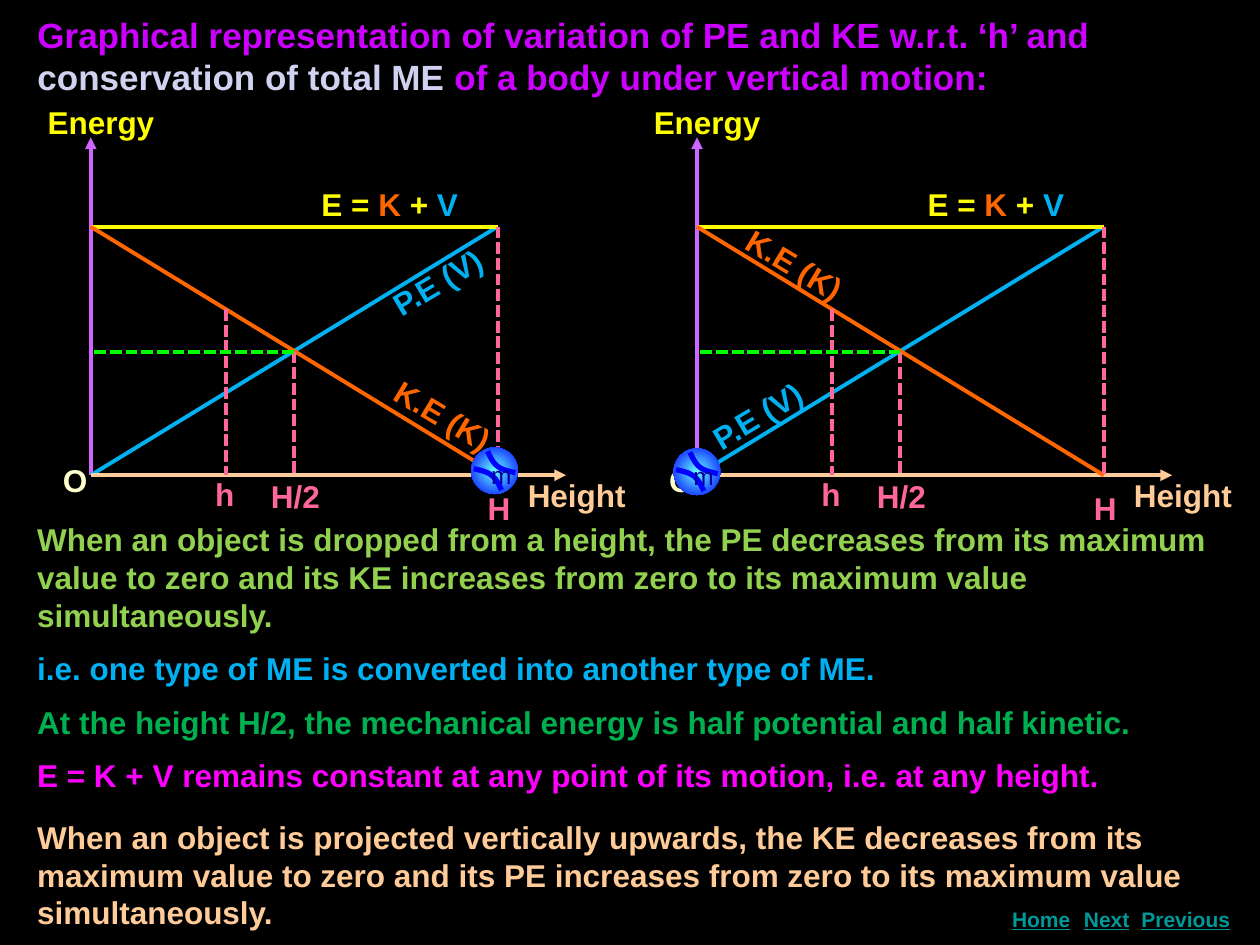
import pptx
import pptx.dml.color
import pptx.enum.dml
import pptx.enum.shapes
import pptx.enum.text
import pptx.oxml.ns
import pptx.util
from lxml import etree

Cm, Pt = pptx.util.Cm, pptx.util.Pt
RGBColor = pptx.dml.color.RGBColor
PP_ALIGN = pptx.enum.text.PP_ALIGN
qn = pptx.oxml.ns.qn

BLACK = RGBColor(0x00, 0x00, 0x00)
VIOLET = RGBColor(0xCC, 0x00, 0xFF)
LAVENDER = RGBColor(0xD1, 0xD1, 0xF0)
PURPLE = RGBColor(0xCC, 0x66, 0xFF)
YELLOW = RGBColor(0xFF, 0xFF, 0x00)
CREAM = RGBColor(0xFF, 0xFF, 0xCC)
ORANGE = RGBColor(0xFF, 0x66, 0x00)
SKY = RGBColor(0x00, 0xB0, 0xF0)
PEACH = RGBColor(0xFF, 0xCC, 0x99)
PINK = RGBColor(0xFF, 0x66, 0x99)
LIME = RGBColor(0x00, 0xFF, 0x00)
LEAF = RGBColor(0x92, 0xD0, 0x50)
GREEN = RGBColor(0x00, 0xB0, 0x50)
MAGENTA = RGBColor(0xFF, 0x00, 0xFF)
TEAL = RGBColor(0x00, 0x99, 0x99)
CYAN = RGBColor(0x66, 0xFF, 0xFF)
BLUE = RGBColor(0x00, 0x00, 0xFF)
NAVY = RGBColor(0x00, 0x00, 0x99)

# Vertical levels of both graphs, and distances along the height axis
AXIS_TOP, TOTAL, CROSSING, BASE = 2.77, 4.57, 7.09, 9.58
FULL_HEIGHT, AXIS_END = 8.2, 9.58
HALF_HEIGHT = FULL_HEIGHT / 2
SOME_HEIGHT = 2.72
SOME_KE = TOTAL + (BASE - TOTAL) * SOME_HEIGHT / FULL_HEIGHT
LEFT_ORIGIN, RIGHT_ORIGIN = 1.83, 14.05

# Seam of the ball, as Bezier points from its centre
SEAM = [(-0.14, -0.39), (-0.09, -0.29), (-0.04, -0.17), (0.06, -0.09),
        (0.17, -0.01), (0.29, 0.01), (0.42, 0.04)]


def bezier(points, steps=8):
    """Points along a chain of cubic Bezier curves."""
    curve = [points[0]]
    for first in range(0, len(points) - 1, 3):
        section = points[first:first + 4]
        for step in range(1, steps + 1):
            t = step / steps
            weights = ((1 - t) ** 3, 3 * t * (1 - t) ** 2, 3 * t ** 2 * (1 - t), t ** 3)
            curve.append(tuple(sum(w * p[axis] for w, p in zip(weights, section))
                               for axis in (0, 1)))
    return curve


class EnergySlide:
    font_name = "Arial"
    line_width = Pt(2.25)

    def __init__(self, presentation):
        self.slide = presentation.slides.add_slide(presentation.slide_layouts[5])
        self.shapes = self.slide.shapes
        background = self.slide.background.fill
        background.solid()
        background.fore_color.rgb = BLACK

    def fill_paragraph(self, paragraph, runs, size=18, bold=True, underline=None):
        """Fill a paragraph with (text, colour) runs."""
        font = paragraph.font
        font.name, font.size, font.bold = self.font_name, Pt(size), bold
        font.underline = underline
        if len(runs) == 1:
            font.color.rgb = runs[0][1]
        for content, color in runs:
            run = paragraph.add_run()
            run.text = content
            if len(runs) > 1:
                run.font.color.rgb = color

    def title(self, left, top, width, height, runs):
        heading = self.shapes.title
        heading.left, heading.top = Cm(left), Cm(top)
        heading.width, heading.height = Cm(width), Cm(height)
        frame = heading.text_frame
        frame.auto_size = pptx.enum.text.MSO_AUTO_SIZE.NONE
        frame.vertical_anchor = pptx.enum.text.MSO_ANCHOR.TOP
        frame.paragraphs[0].alignment = PP_ALIGN.LEFT
        self.fill_paragraph(frame.paragraphs[0], runs, size=20)

    def text(self, left, top, width, height, paragraphs, align=None, rotation=0,
             wrap=True, **style):
        box = self.shapes.add_textbox(Cm(left), Cm(top), Cm(width), Cm(height))
        box.rotation = rotation
        frame = box.text_frame
        frame.word_wrap = wrap
        for index, runs in enumerate(paragraphs):
            paragraph = frame.add_paragraph() if index else frame.paragraphs[0]
            paragraph.alignment = align
            if index:
                paragraph.space_before = Pt(9)
            self.fill_paragraph(paragraph, runs, **style)

    def line(self, x1, y1, x2, y2, color, dashed=False, arrow=False):
        connector = self.shapes.add_connector(
            pptx.enum.shapes.MSO_CONNECTOR.STRAIGHT, Cm(x1), Cm(y1), Cm(x2), Cm(y2))
        connector.line.color.rgb = color
        connector.line.width = self.line_width
        if dashed:
            connector.line.dash_style = pptx.enum.dml.MSO_LINE.SQUARE_DOT
        properties = connector._element.spPr
        if arrow:
            etree.SubElement(properties.find(qn("a:ln")), qn("a:tailEnd"), type="triangle")
        etree.SubElement(properties, qn("a:effectLst"))

    def ball(self, x, y, diameter=0.94):
        sphere = self.shapes.add_shape(
            pptx.enum.shapes.MSO_SHAPE.OVAL, Cm(x - diameter / 2), Cm(y - diameter / 2),
            Cm(diameter), Cm(diameter))
        sphere.shadow.inherit = False
        sphere.line.fill.background()
        sphere.fill.gradient()
        for stop, color in zip(sphere.fill.gradient_stops, (CYAN, BLUE)):
            stop.color.rgb = color
        # Radial gradient from the centre
        linear = sphere._element.spPr.find(".//" + qn("a:lin"))
        radial = etree.Element(qn("a:path"), {"path": "circle"})
        etree.SubElement(radial, qn("a:fillToRect"),
                         {side: "50000" for side in ("l", "t", "r", "b")})
        linear.getparent().replace(linear, radial)
        # The two seams mirror each other through the centre
        for sign in (1, -1):
            points = [(Cm(x + sign * dx), Cm(y + sign * dy)) for dx, dy in bezier(SEAM)]
            builder = self.shapes.build_freeform(*points[0])
            builder.add_line_segments(points[1:], close=False)
            seam = builder.convert_to_shape()
            seam.shadow.inherit = False
            seam.fill.background()
            seam.line.color.rgb = BLUE
            seam.line.width = Pt(3)
        self.text(x - 0.32, y - 0.34, 0.84, 0.81, [[("m", NAVY)]],
                  wrap=False, size=14, bold=False)

    def graph(self, origin, pe_label, ke_label):
        """Energy against height; label places are given from the origin."""
        end = origin + FULL_HEIGHT
        half = origin + HALF_HEIGHT
        some = origin + SOME_HEIGHT
        # Axes and energy lines
        self.line(origin, BASE, origin, AXIS_TOP, PURPLE, arrow=True)
        self.line(origin, BASE, end, TOTAL, SKY)
        self.line(origin, TOTAL, end, TOTAL, YELLOW)
        self.line(origin, BASE, origin + AXIS_END, BASE, PEACH, arrow=True)
        self.line(origin, TOTAL, end, BASE, ORANGE)
        # Guides
        for x, top in ((end, TOTAL), (half, CROSSING), (some, SOME_KE)):
            self.line(x, top, x, BASE, PINK, dashed=True)
        self.line(half, CROSSING, origin, CROSSING, LIME, dashed=True)
        # Labels
        total = [("E = ", YELLOW), ("K", ORANGE), (" + ", YELLOW), ("V", SKY)]
        for dx, top, width, runs, rotation in (
                (-1.12, 1.96, 2.79, [("Energy", YELLOW)], 0),
                (4.4, 3.61, 3.53, total, 0),
                (-0.81, 9.17, 1.07, [("O", CREAM)], 0),
                (8.56, 9.47, 2.54, [("Height", PEACH)], 0),
                (7.75, 9.74, 0.79, [("H", PINK)], 0),
                (3.38, 9.5, 1.6, [("H/2", PINK)], 0),
                (2.26, 9.45, 0.79, [("h", PINK)], 0),
                (*pe_label, 2.64, [("P.E (V)", SKY)], -30.8),
                (*ke_label, 2.64, [("K.E (K)", ORANGE)], 30.9)):
            self.text(origin + dx, top, width, 1.02, [runs], rotation=rotation)


def main():
    presentation = pptx.Presentation()
    presentation.slide_width, presentation.slide_height = Cm(25.4), Cm(19.05)
    page = EnergySlide(presentation)

    page.title(0.5, 0.15, 23.8, 1.96, [
        ("Graphical representation of variation of PE and KE w.r.t. ‘h’ and ", VIOLET),
        ("conservation of total ME ", LAVENDER),
        ("of a body under vertical motion:", VIOLET)])

    # Dropped body on the left, projected body on the right
    page.graph(LEFT_ORIGIN, pe_label=(5.74, 5.13), ke_label=(5.79, 7.87))
    page.graph(RIGHT_ORIGIN, pe_label=(-0.03, 7.82), ke_label=(0.66, 4.83))
    page.ball(LEFT_ORIGIN + FULL_HEIGHT - 0.06, 9.49)
    page.ball(RIGHT_ORIGIN, 9.51)

    # Explanations
    page.text(0.5, 10.36, 24.61, 6.02, [
        [("When an object is dropped from a height, the PE decreases from its maximum "
          "value to zero and its KE increases from zero to its maximum value "
          "simultaneously.", LEAF)],
        [("i.e. one type of ME is converted into another type of ME.", SKY)],
        [("At the height H/2, the mechanical energy is half potential and half kinetic.",
          GREEN)],
        [("E = K + V remains constant at any point of its motion, i.e. at any height.",
          MAGENTA)]])
    page.text(0.5, 16.36, 24.61, 2.57, [
        [("When an object is projected vertically upwards, the KE decreases from its "
          "maximum value to zero and its PE increases from zero to its maximum value "
          "simultaneously.", PEACH)]])

    # Navigation
    for left, width, label in ((20.09, 1.8, "Home"), (21.51, 1.6, "Next"),
                               (22.71, 2.39, "Previous")):
        page.text(left, 18.15, width, 0.76, [[(label, TEAL)]],
                  align=PP_ALIGN.CENTER, size=12, underline=True)

    presentation.save("out.pptx")


if __name__ == "__main__":
    main()
